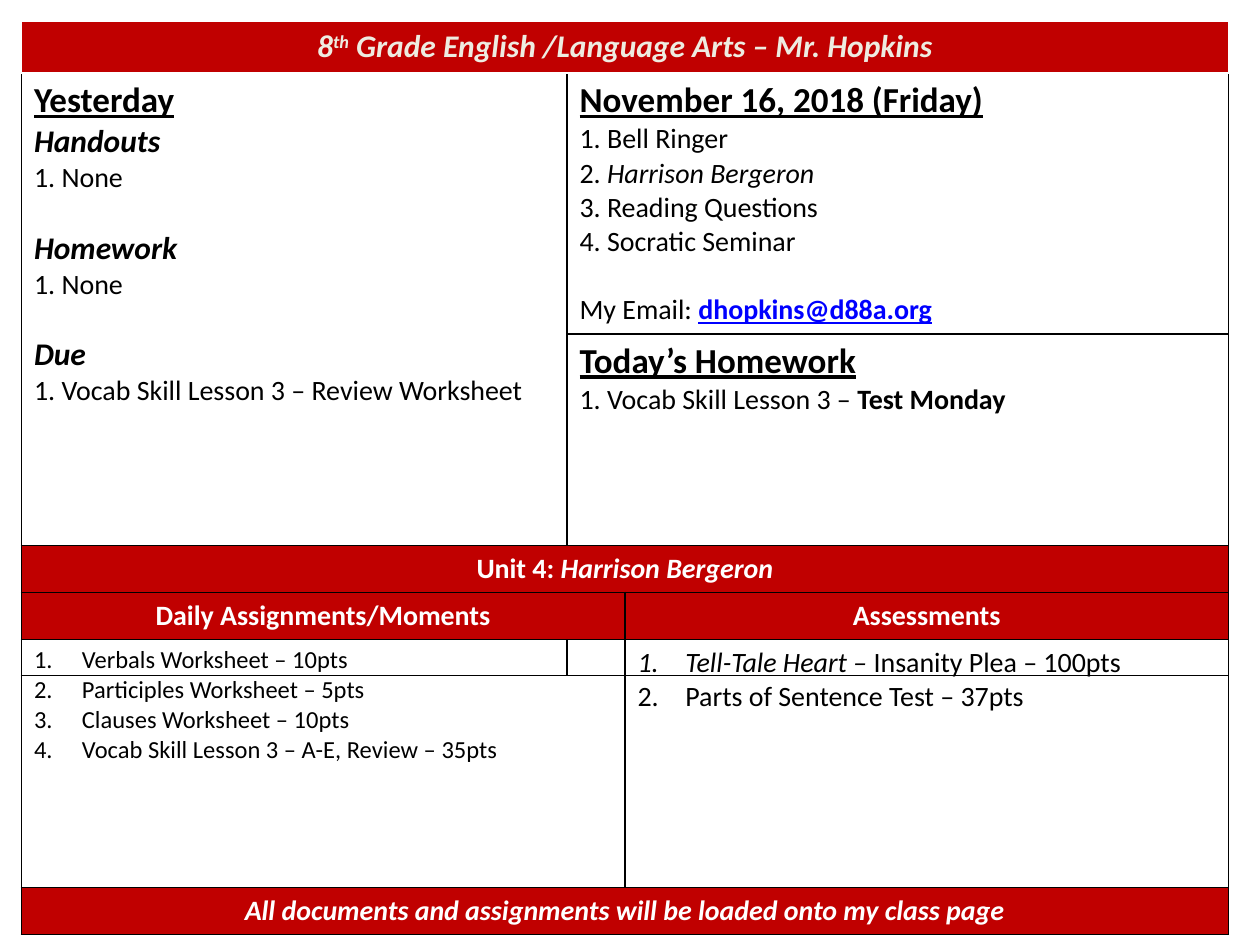
from pptx import Presentation
from pptx.util import Inches, Pt
from pptx.dml.color import RGBColor as RGB
from pptx.enum.text import PP_ALIGN as Align
from lxml.etree import SubElement as Sub
from pptx.oxml.ns import qn

THEME = dict(font="Calibri", red="C00000", cream="EEECE1", white="FFFFFF",
             black="000000", link="0000FF",
             head=20, sub=18, body=16, small=14, gap=19.5)
LEFT, WIDE = 0.17, 9.58

# A line is a list of runs (text, marks) and its format.
# Marks: b bold, i italic, u underline, ^ superscript, @ address colour.


def line(*runs, **form):
    return [(r, "") if isinstance(r, str) else r for r in runs], form


def head(text):
    return line((text, "bu"), size="head")


def sub(text, **form):
    return line((text, "bi"), size="sub", **form)


def bar(*runs, **form):
    return [line(*runs, **{"color": "white", "center": True, **form})]


def item(*runs, **form):
    return line(*runs, number=True, **form)


BANNER = [[bar(("8", "bi"), ("th", "bi^"),
               (" Grade English /Language Arts – Mr. Hopkins", "bi"),
               size="sub", color="cream")]]
PAST = [
    head("Yesterday"),
    sub("Handouts"), line("1. None"),
    sub("Homework", gap=True), line("1. None"),
    sub("Due", gap=True), line("1. Vocab Skill Lesson 3 – Review Worksheet"),
]
TODAY = [
    head("November 16, 2018 (Friday)"),
    line("1. Bell Ringer"),
    line("2. ", ("Harrison Bergeron", "i")),
    line("3. Reading Questions"),
    line("4. Socratic Seminar"),
    line("My Email: ", ("dhopkins@d88a.org", "bu@"), gap=True),
]
HOMEWORK = [
    head("Today’s Homework"),
    line("1. Vocab Skill Lesson 3 – ", ("Test Monday", "b")),
]
TASKS = [item(text, size="small") for text in (
    "Verbals Worksheet – 10pts",
    "Participles Worksheet – 5pts",
    "Clauses Worksheet – 10pts",
    "Vocab Skill Lesson 3 – A-E, Review – 35pts",
)]
TESTS = [
    item(("Tell-Tale Heart – ", "i"), "Insanity Plea – 100pts"),
    item("Parts of Sentence Test – 37pts"),
]
DAILY = [[PAST, TODAY], [None, HOMEWORK]]
UNIT = [
    [bar(("Unit 4: ", "b"), ("Harrison Bergeron", "bi")), None],
    [bar(("Daily Assignments/Moments", "b")), bar(("Assessments", "b"))],
    [TASKS, TESTS],
    [bar(("All documents and assignments will be loaded onto my class page",
          "bi")), None],
]


def write(para, runs, size="body", color="black", center=False, gap=False,
          number=False):
    para.alignment = Align.CENTER if center else Align.LEFT
    if gap:
        para.space_before = Pt(THEME["gap"])
    if number:
        props = para._p.get_or_add_pPr()
        props.set("marL", str(Inches(0.38)))
        props.set("indent", str(-Inches(0.38)))
        Sub(props, qn("a:buFont"), typeface="+mj-lt")
        Sub(props, qn("a:buAutoNum"), type="arabicPeriod")
    for text, marks in runs:
        run = para.add_run()
        run.text = text
        font = run.font
        font.name, font.size = THEME["font"], Pt(THEME[size])
        font.bold, font.italic = "b" in marks, "i" in marks
        font.underline = "u" in marks
        font.color.rgb = RGB.from_string(THEME["link" if "@" in marks else color])
        if "^" in marks:
            run._r.get_or_add_rPr().set("baseline", "30000")


def edge(cell):
    """Draw a thin black line on all four sides of a cell."""
    props = cell._tc.get_or_add_tcPr()
    for spot, side in enumerate(("lnL", "lnR", "lnT", "lnB")):
        rule = Sub(props, qn("a:" + side), w=str(Pt(1)))
        props.insert(spot, rule)
        Sub(Sub(rule, qn("a:solidFill")), qn("a:srgbClr"), val=THEME["black"])


def grid(slide, rows, top, cols, heights, spans=(), lined=True):
    table = slide.shapes.add_table(
        len(rows), len(cols), Inches(LEFT), Inches(top),
        Inches(WIDE), Inches(sum(heights))).table
    table.first_row = table.horz_banding = False
    for col, width in zip(table.columns, cols):
        col.width = Inches(width)
    for row, height in zip(table.rows, heights):
        row.height = Inches(height)
    for start, end in spans:
        table.cell(*start).merge(table.cell(*end))
    for r, row in enumerate(rows):
        for c, lines in enumerate(row):
            cell = table.cell(r, c)
            cell.fill.background()
            if lined:
                edge(cell)
            if not lines:
                continue
            if lines[0][1].get("center"):
                cell.fill.solid()
                cell.fill.fore_color.rgb = RGB.from_string(THEME["red"])
            frame = cell.text_frame
            for n, (runs, form) in enumerate(lines):
                para = frame.add_paragraph() if n else frame.paragraphs[0]
                write(para, runs, **form)


def main():
    deck = Presentation()
    deck.slide_width, deck.slide_height = Inches(10), Inches(7.5)
    slide = deck.slides.add_slide(deck.slide_layouts[6])
    grid(slide, DAILY, 0.58, [4.33, 5.25], [1.83, 1.83],
         spans=[((0, 0), (1, 0))])
    grid(slide, BANNER, LEFT, [WIDE], [0.41], lined=False)
    grid(slide, UNIT, 4.33, [WIDE / 2] * 2, [0.37, 0.37, 1.97, 0.37],
         spans=[((r, 0), (r, 1)) for r in (0, 3)])
    deck.save("out.pptx")


if __name__ == "__main__":
    main()
